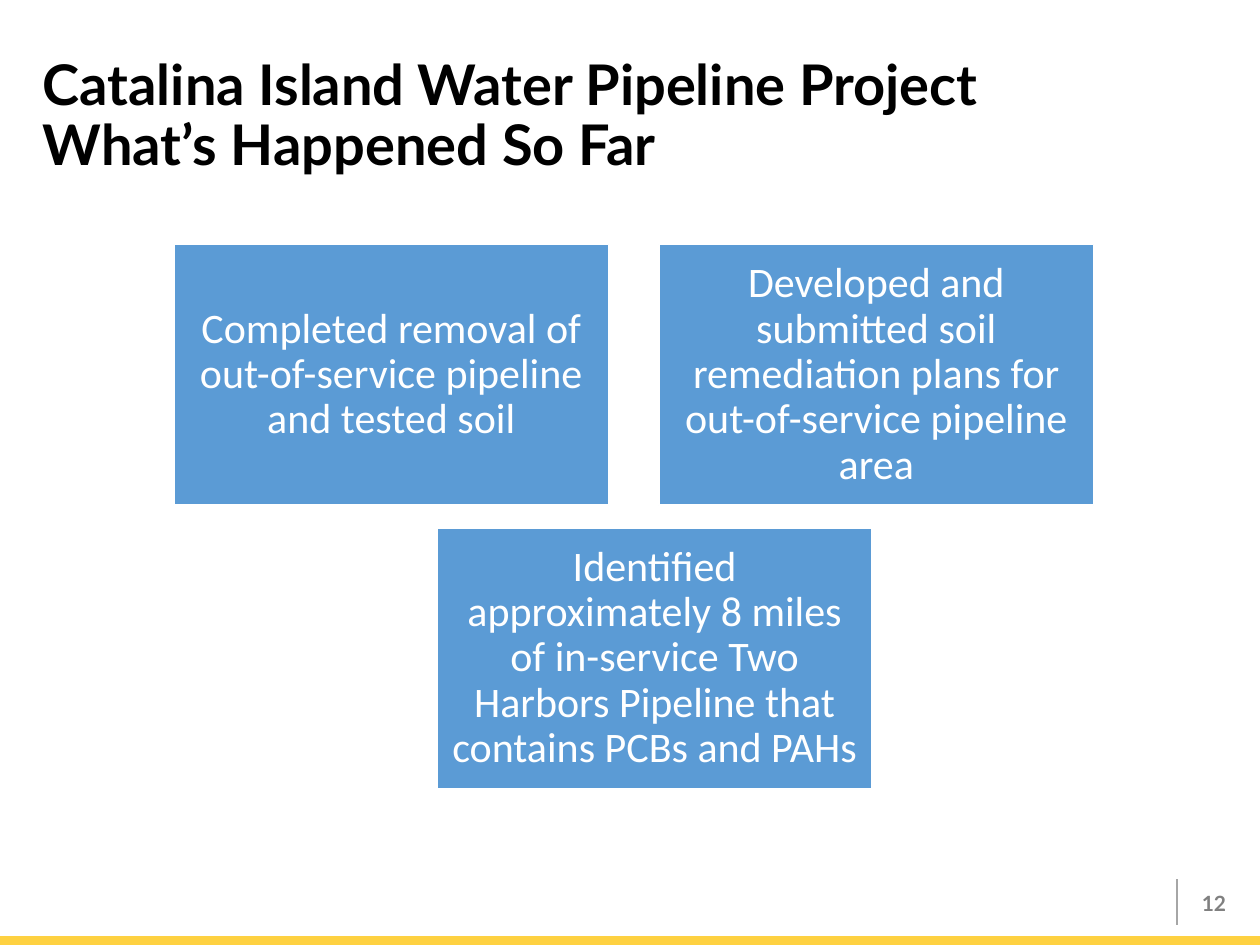
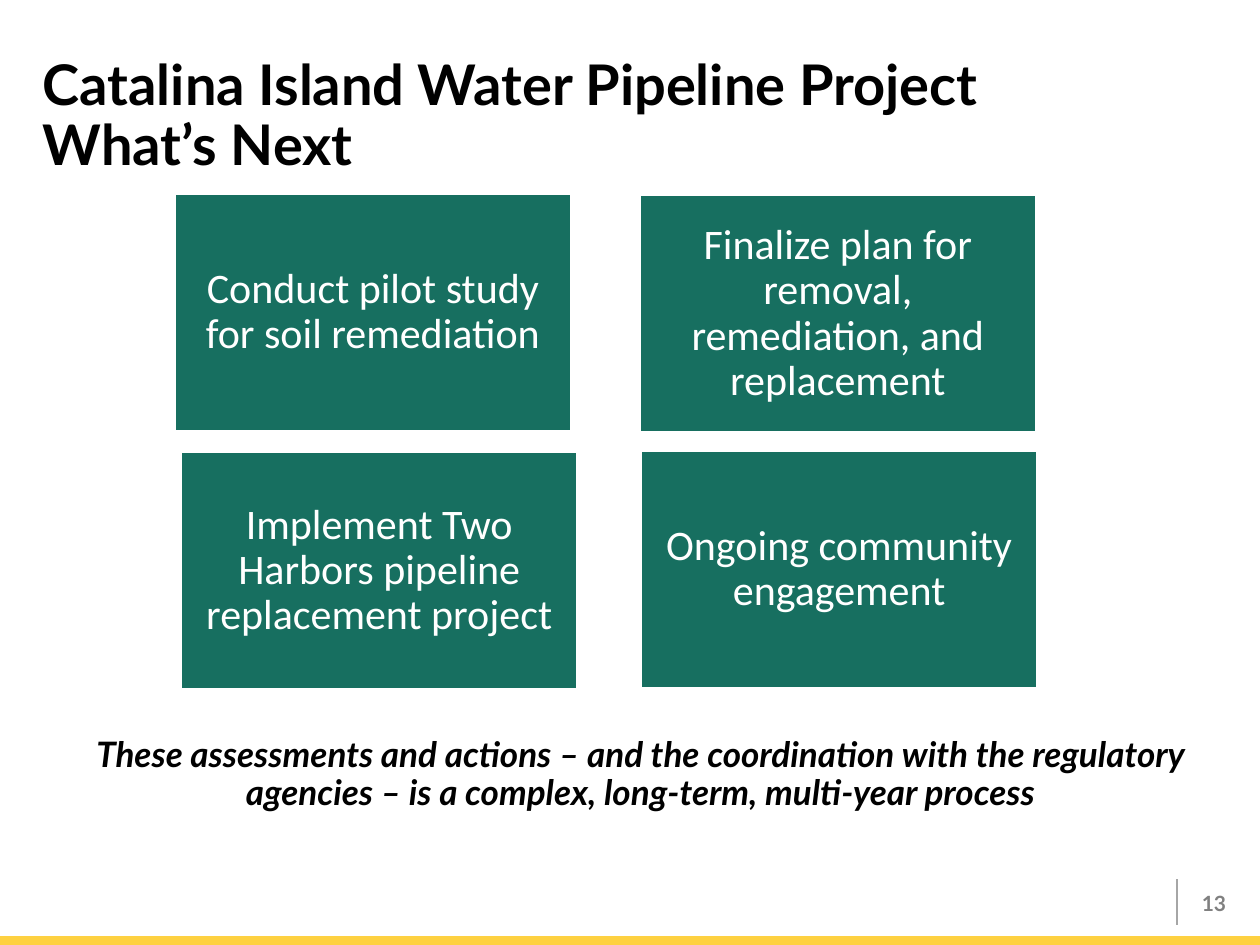
from dataclasses import dataclass

from lxml import etree
from pptx import Presentation
from pptx.dml.color import RGBColor
from pptx.enum.shapes import MSO_CONNECTOR, MSO_SHAPE
from pptx.enum.text import MSO_ANCHOR, PP_ALIGN
from pptx.oxml.ns import qn
from pptx.util import Pt

RECTANGLE = MSO_SHAPE.RECTANGLE
STRAIGHT = MSO_CONNECTOR.STRAIGHT
TOP, MIDDLE = MSO_ANCHOR.TOP, MSO_ANCHOR.MIDDLE
LEFT, CENTER, RIGHT = PP_ALIGN.LEFT, PP_ALIGN.CENTER, PP_ALIGN.RIGHT

EMU_PER_PX = 9144
SLIDE_WIDTH, SLIDE_HEIGHT = 1000, 750
BLANK_LAYOUT = 6


@dataclass(frozen=True)
class Theme:
    heading_font: str = "Lato"
    card_font: str = "Calibri"
    black: str = "000000"
    white: str = "FFFFFF"
    done: str = "5B9BD5"
    upcoming: str = "176F60"
    band: str = "FED141"
    divider: str = "A6A6A6"
    number: str = "808080"
    title_size: int = 32
    card_size: int = 24
    closing_size: int = 20
    number_size: int = 12
    line_width: int = 1


def px(value):
    return value * EMU_PER_PX


def set_attributes(target, values):
    for attribute, value in values.items():
        setattr(target, attribute, value)


class Deck:
    def __init__(self, theme):
        self.theme = theme
        self.presentation = Presentation()
        self.presentation.slide_width = px(SLIDE_WIDTH)
        self.presentation.slide_height = px(SLIDE_HEIGHT)
        self.slide = None

    def add_slide(self, title, number):
        layout = self.presentation.slide_layouts[BLANK_LAYOUT]
        self.slide = self.presentation.slides.add_slide(layout)
        theme = self.theme
        self.line(934, 698, 934, 734, theme.divider)
        self.rectangle((0, 743, SLIDE_WIDTH, 8), theme.band)
        self.text_box((927, 697, 56, 40), str(number), theme.number_size,
                      theme.number, align=RIGHT, anchor=MIDDLE, spacing=1.0)
        self.text_box((24, 40, 950, 55), title, theme.title_size, theme.black)

    def line(self, x1, y1, x2, y2, color):
        connector = self.slide.shapes.add_connector(
            STRAIGHT, px(x1), px(y1), px(x2), px(y2))
        connector.line.color.rgb = RGBColor.from_string(color)
        connector.line.width = Pt(self.theme.line_width)
        etree.SubElement(connector._element.spPr, qn("a:effectLst"))

    def rectangle(self, box, fill, outline=None):
        shape = self.slide.shapes.add_shape(RECTANGLE, *map(px, box))
        shape.shadow.inherit = False
        shape.fill.solid()
        shape.fill.fore_color.rgb = RGBColor.from_string(fill)
        if outline:
            shape.line.color.rgb = RGBColor.from_string(outline)
            shape.line.width = Pt(self.theme.line_width)
        else:
            shape.line.fill.background()
        return shape

    def fill_text(self, frame, text, color, font, frame_format,
                  paragraph_format):
        set_attributes(frame, {"word_wrap": True, **frame_format})
        paragraph = frame.paragraphs[0]
        paragraph.text = text
        set_attributes(paragraph, paragraph_format)
        for run in paragraph.runs:
            set_attributes(run.font, font)
            run.font.color.rgb = RGBColor.from_string(color)

    def text_box(self, box, text, size, color, align=LEFT, anchor=TOP,
                 spacing=0.9, italic=False):
        frame = self.slide.shapes.add_textbox(*map(px, box)).text_frame
        font = {"name": self.theme.heading_font, "size": Pt(size),
                "bold": True, "italic": italic}
        self.fill_text(frame, text, color, font, {"vertical_anchor": anchor},
                       {"alignment": align, "line_spacing": spacing})

    def card(self, box, text, fill):
        theme = self.theme
        frame = self.rectangle(box, fill, theme.white).text_frame
        margins = {f"margin_{side}": px(10)
                   for side in ("left", "top", "right", "bottom")}
        self.fill_text(frame, text, theme.white,
                       {"name": theme.card_font, "size": Pt(theme.card_size)},
                       {"vertical_anchor": MIDDLE, **margins},
                       {"alignment": CENTER, "line_spacing": 0.9})

    def cards(self, size, fill, steps):
        for left, top, text in steps:
            self.card((left, top, *size), text, fill)


def main():
    theme = Theme()
    deck = Deck(theme)
    project = "Catalina Island Water Pipeline Project"

    deck.add_slide(f"{project}\vWhat’s Happened So Far", 12)
    deck.cards((345, 207), theme.done, [
        (138, 194, "Completed removal of out-of-service pipeline "
                   "and tested soil"),
        (523, 194, "Developed and submitted soil remediation plans "
                   "for out-of-service pipeline area"),
        (347, 419, "Identified approximately 8 miles of in-service "
                   "Two Harbors Pipeline that contains PCBs and PAHs"),
    ])

    deck.add_slide(f"{project}\vWhat’s Next", 13)
    deck.text_box((42, 580, 933, 118),
                  "These assessments and actions – and the coordination with "
                  "the regulatory agencies – is a complex, long-term, "
                  "multi-year process",
                  theme.closing_size, theme.black, align=CENTER, italic=True)
    deck.cards((314, 188), theme.upcoming, [
        (139, 154, "Conduct pilot study for soil remediation"),
        (508, 155, "Finalize plan for removal, remediation, and replacement"),
        (144, 359, "Implement Two Harbors pipeline replacement project"),
        (509, 358, "Ongoing community engagement"),
    ])

    deck.presentation.save("out.pptx")


if __name__ == "__main__":
    main()
